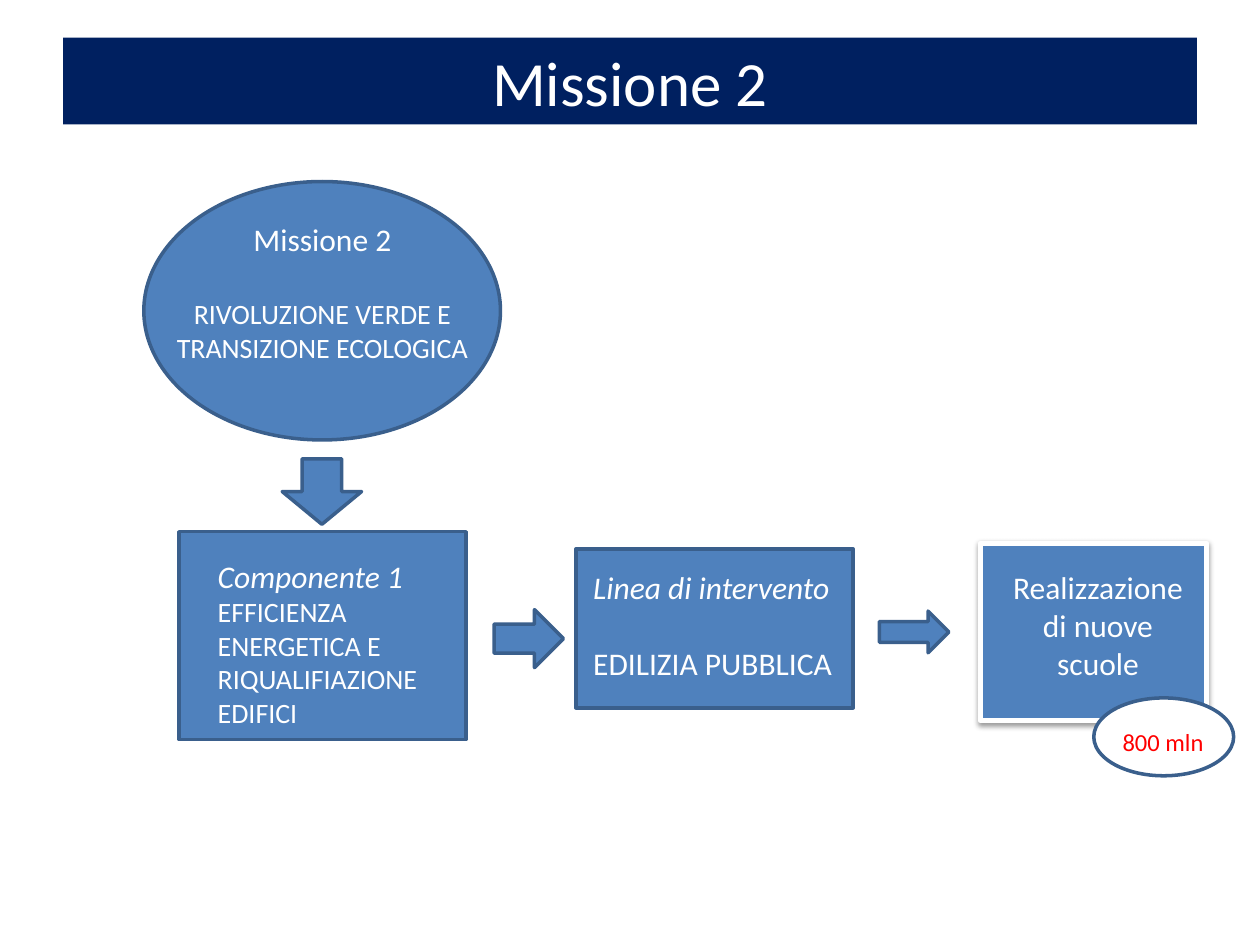
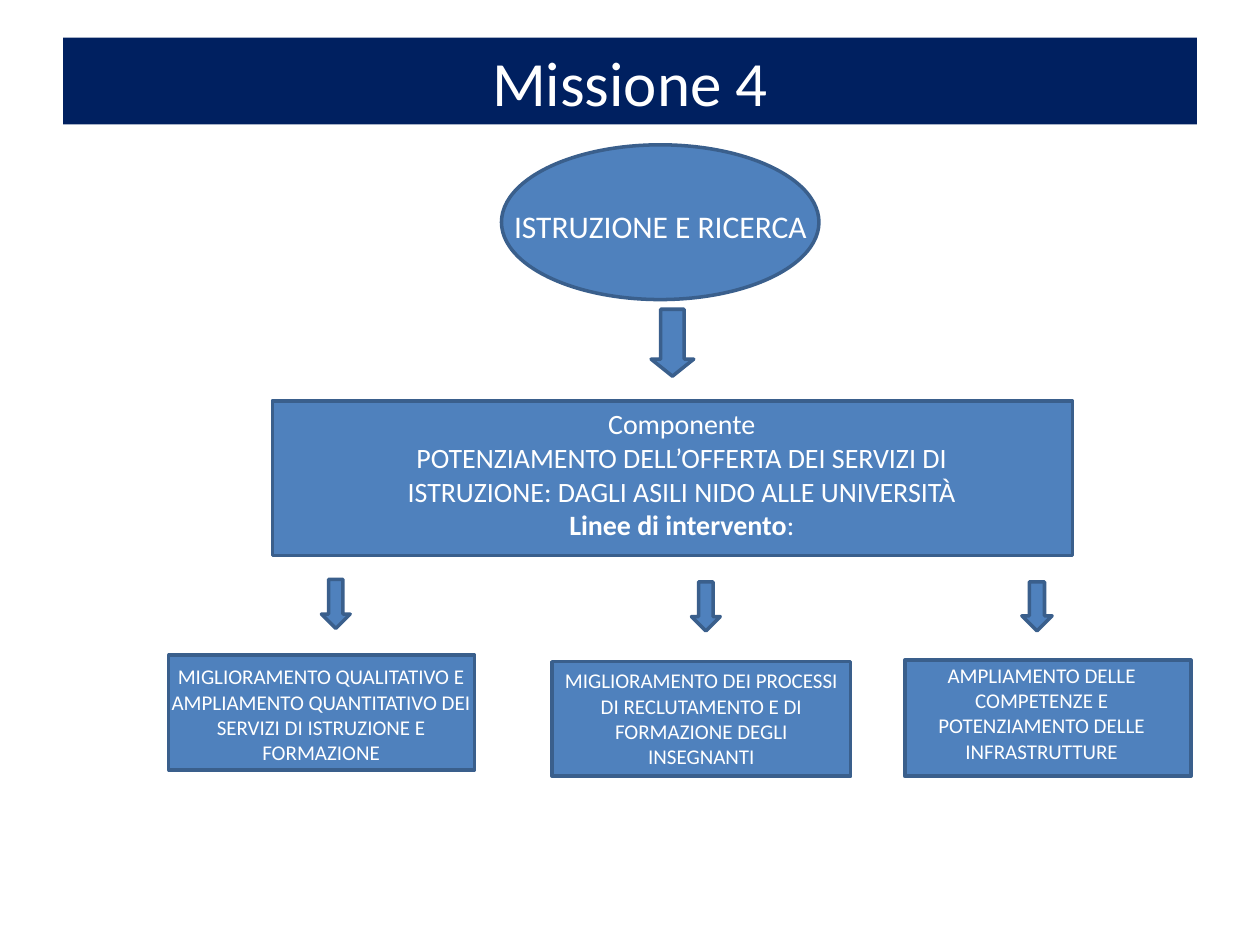
"""Build two flow-chart slides on Missione 2 and Missione 4."""
import lxml.etree
import pptx
import pptx.dml.color
import pptx.enum.shapes
import pptx.enum.text
import pptx.oxml.ns
import pptx.util

Cm = pptx.util.Cm
Pt = pptx.util.Pt
RGB = pptx.dml.color.RGBColor
SHAPE = pptx.enum.shapes.MSO_SHAPE
ALIGN = pptx.enum.text.PP_ALIGN
AUTO_SIZE = pptx.enum.text.MSO_AUTO_SIZE

NAVY = RGB(0x00, 0x20, 0x60)
BLUE = RGB(0x4F, 0x81, 0xBD)
EDGE = RGB(0x3A, 0x5F, 0x8C)
WHITE = RGB(0xFF, 0xFF, 0xFF)
RED = RGB(0xFF, 0x00, 0x00)
FONT = "Calibri"
TITLE_BAND = (1.27, 0.76, 22.86, 1.75)
BLANK_LINE = 22

SLIDES = [
    {
        "title": "Missione 2",
        "nodes": [
            {"kind": SHAPE.OVAL, "box": (2.9, 3.66, 7.19, 5.21),
             "text_box": (3.12, 4.32, 6.76, 3.18),
             "lines": [{"text": "Missione 2"},
                       {"text": "RIVOLUZIONE VERDE E TRANSIZIONE ECOLOGICA",
                        "size": 16, "gap": BLANK_LINE}]},
            {"box": (3.61, 10.72, 5.79, 4.19),
             "text_box": (4.14, 11.1, 5, 3.76), "align": ALIGN.LEFT,
             "lines": [{"text": "Componente 1", "italic": True},
                       {"text": "EFFICIENZA ENERGETICA E RIQUALIFIAZIONE EDIFICI",
                        "size": 16}]},
            {"box": (11.61, 11.07, 5.59, 3.2),
             "text_box": (11.71, 11.33, 5.59, 2.57), "align": ALIGN.LEFT,
             "lines": [{"text": "Linea di intervento", "italic": True},
                       {"text": "EDILIZIA PUBBLICA", "gap": BLANK_LINE}]},
            {"box": (19.76, 10.95, 4.57, 3.58),
             "style": {"edge": WHITE, "edge_width": 3, "shadow": True},
             "text_box": (20.04, 11.33, 4.19, 2.57),
             "lines": [{"text": "Realizzazione di nuove scuole"}]},
            {"kind": SHAPE.OVAL, "box": (22.05, 14.07, 2.82, 1.57),
             "style": {"fill": WHITE},
             "text_box": (22.38, 14.53, 2.25, 0.86), "align": ALIGN.LEFT,
             "lines": [{"text": "800 mln", "size": 14, "color": RED}]},
        ],
        "arrows": [
            {"kind": SHAPE.DOWN_ARROW, "box": (5.69, 9.25, 1.6, 1.32)},
            {"kind": SHAPE.RIGHT_ARROW, "box": (9.96, 12.29, 1.4, 1.17)},
            {"kind": SHAPE.RIGHT_ARROW, "box": (17.73, 12.32, 1.4, 0.84)},
        ],
    },
    {
        "title": "Missione 4",
        "nodes": [
            {"kind": SHAPE.OVAL, "box": (10.11, 2.92, 6.4, 3.12),
             "text_box": (9.91, 4.04, 6.81, 1.02),
             "lines": [{"text": "ISTRUZIONE E RICERCA"}]},
            {"box": (5.49, 8.08, 16.13, 3.12),
             "text_box": (6.99, 8.08, 13.51, 3.07),
             "lines": [{"text": "Componente", "size": 16},
                       {"text": "POTENZIAMENTO DELL’OFFERTA DEI SERVIZI DI "
                                "ISTRUZIONE: DAGLI ASILI NIDO ALLE UNIVERSITÀ",
                        "size": 16},
                       {"text": "Linee di intervento", "size": 16,
                        "bold": True, "plain_tail": ":"}]},
            {"box": (3.4, 13.21, 6.17, 2.31),
             "text_box": (3.2, 13.26, 6.55, 2.31),
             "lines": [{"text": "MIGLIORAMENTO QUALITATIVO E AMPLIAMENTO QUANTITATIVO "
                                "DEI SERVIZI DI ISTRUZIONE E FORMAZIONE", "size": 12}]},
            {"box": (11.13, 13.34, 6.02, 2.31),
             "text_box": (11.13, 13.34, 6.02, 2.31),
             "lines": [{"text": "MIGLIORAMENTO DEI PROCESSI DI RECLUTAMENTO "
                                "E DI FORMAZIONE DEGLI INSEGNANTI", "size": 12}]},
            {"box": (18.24, 13.31, 5.77, 2.34),
             "text_box": (18.64, 13.23, 4.72, 2.31),
             "lines": [{"text": "AMPLIAMENTO DELLE COMPETENZE E POTENZIAMENTO "
                                "DELLE INFRASTRUTTURE", "size": 12}]},
        ],
        "arrows": [
            {"kind": SHAPE.RIGHT_ARROW, "box": (12.88, 6.48, 1.35, 0.86),
             "rotation": 90, "adjustments": (0.55, 0.4)},
            {"kind": SHAPE.DOWN_ARROW, "box": (6.48, 11.68, 0.58, 0.99)},
            {"kind": SHAPE.DOWN_ARROW, "box": (13.94, 11.73, 0.58, 0.99)},
            {"kind": SHAPE.DOWN_ARROW, "box": (20.6, 11.73, 0.61, 0.99)},
        ],
    },
]


def in_cm(box):
    return [Cm(length) for length in box]


def write_line(frame, text, size=18, color=WHITE, align=ALIGN.CENTER,
               bold=False, italic=False, gap=0, plain_tail=""):
    line = frame.add_paragraph() if frame.text else frame.paragraphs[0]
    line.alignment = align
    line.space_before = Pt(gap)
    for words, weight in ((text, bold), (plain_tail, False)):
        if words:
            run = line.add_run()
            run.text = words
            run.font.name = FONT
            run.font.size = Pt(size)
            run.font.color.rgb = color
            run.font.bold = weight
            run.font.italic = italic


def cast_shadow(shape):
    effects = shape._element.spPr.find(pptx.oxml.ns.qn("a:effectLst"))
    outer = lxml.etree.SubElement(
        effects, pptx.oxml.ns.qn("a:outerShdw"), blurRad=str(Pt(3.1)),
        dist=str(Pt(1.6)), dir="5400000", rotWithShape="0")
    black = lxml.etree.SubElement(outer, pptx.oxml.ns.qn("a:srgbClr"), val="000000")
    lxml.etree.SubElement(black, pptx.oxml.ns.qn("a:alpha"), val="38000")


def draw_shape(slide, kind, box, fill=BLUE, edge=EDGE, edge_width=2,
               shadow=False, rotation=0, adjustments=()):
    shape = slide.shapes.add_shape(kind, *in_cm(box))
    shape.fill.solid()
    shape.fill.fore_color.rgb = fill
    shape.line.color.rgb = edge
    shape.line.width = Pt(edge_width)
    shape.rotation = rotation
    for position, value in enumerate(adjustments):
        shape.adjustments[position] = value
    shape.shadow.inherit = False
    if shadow:
        cast_shadow(shape)


def draw_node(slide, node):
    draw_shape(slide, node.get("kind", SHAPE.RECTANGLE), node["box"],
               **node.get("style", {}))
    frame = slide.shapes.add_textbox(*in_cm(node["text_box"])).text_frame
    frame.word_wrap = True
    frame.auto_size = AUTO_SIZE.SHAPE_TO_FIT_TEXT
    for line in node["lines"]:
        write_line(frame, align=node.get("align", ALIGN.CENTER), **line)


def draw_title(slide, text):
    title = slide.shapes.title
    title.left, title.top, title.width, title.height = in_cm(TITLE_BAND)
    title.fill.solid()
    title.fill.fore_color.rgb = NAVY
    title.text_frame.auto_size = AUTO_SIZE.NONE
    title.text_frame.vertical_anchor = pptx.enum.text.MSO_ANCHOR.MIDDLE
    write_line(title.text_frame, text, size=36)


def main():
    deck = pptx.Presentation()
    deck.slide_width, deck.slide_height = Cm(25.4), Cm(19.05)
    for content in SLIDES:
        slide = deck.slides.add_slide(deck.slide_layouts.get_by_name("Title Only"))
        draw_title(slide, content["title"])
        for node in content["nodes"]:
            draw_node(slide, node)
        for arrow in content["arrows"]:
            draw_shape(slide, **arrow)
    deck.save("out.pptx")


if __name__ == "__main__":
    main()
